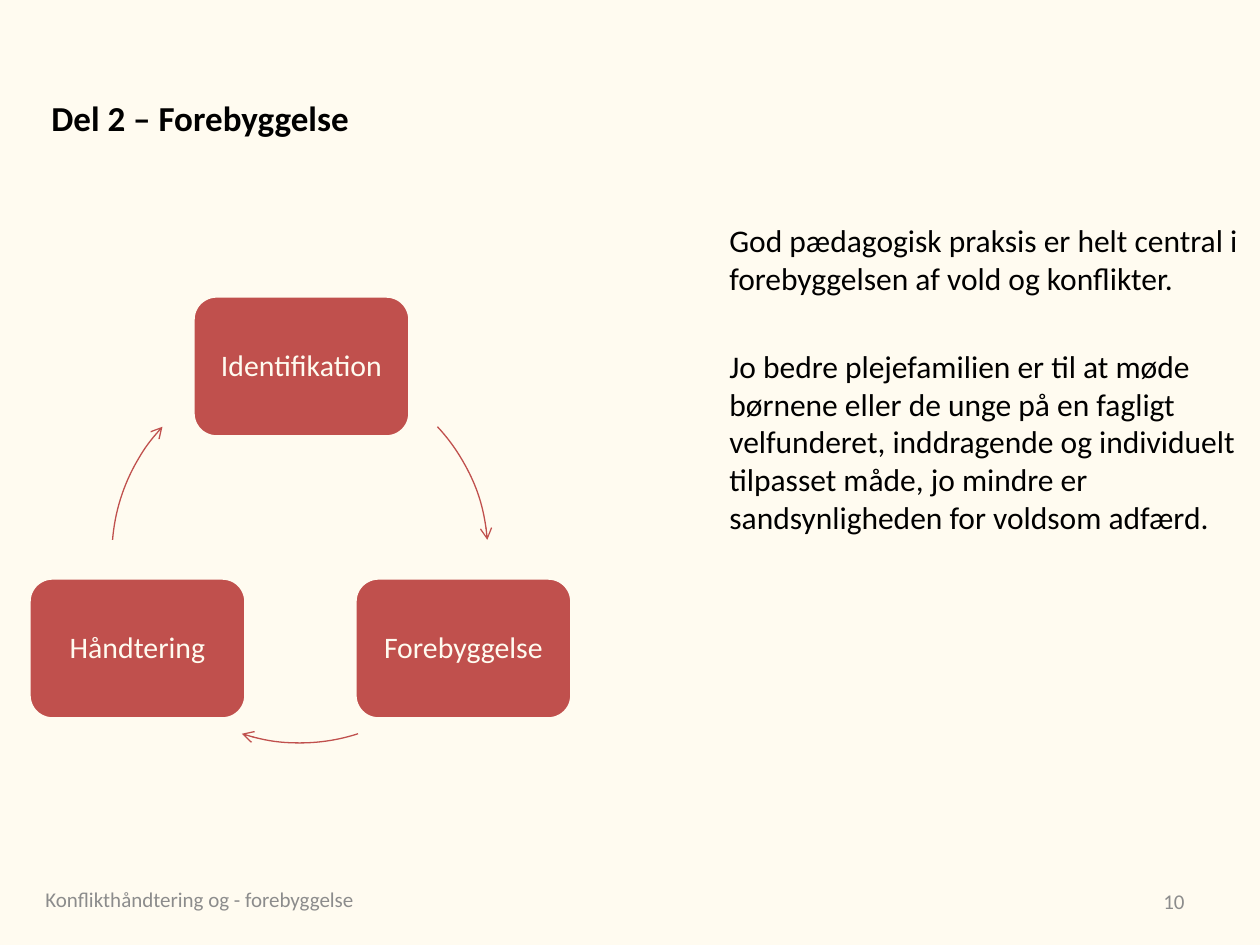
from typing import NamedTuple

from lxml import etree
from pptx import Presentation
from pptx import util as u
from pptx.dml.color import RGBColor
from pptx.enum import shapes, text
from pptx.oxml.ns import qn

EMU_PER_PX = 914400 / 126
FONT = "Calibri"
CREAM, RED, BLACK, GREY = "FFFBF0", "C0504D", "000000", "8C8C8C"


class Box(NamedTuple):
    left: int
    top: int
    width: int
    height: int


class Step(NamedTuple):
    label: str
    left: int
    top: int


class Arc(NamedTuple):
    start: float  # degrees, clockwise from three o'clock
    end: float


CYCLE = Box(112, 367, 376, 376)
STEP_WIDTH, STEP_HEIGHT = 217, 141
STEPS = [
    Step("Identifikation", 193, 296),
    Step("Forebyggelse", 355, 578),
    Step("Håndtering", 29, 578),
]
ARCS = [Arc(317, 355.4), Arc(72, 108), Arc(184.6, 223)]


def px(value: int) -> u.Emu:
    return u.Emu(round(value * EMU_PER_PX))


def place(box: Box) -> list[u.Emu]:
    return [px(value) for value in box]


def color(code: str) -> RGBColor:
    return RGBColor.from_string(code)


def write(shape, *paragraphs: str, size: float, fill: str = BLACK,
          bold: bool = False, align=text.PP_ALIGN.LEFT,
          anchor=text.MSO_ANCHOR.MIDDLE, gap: float = 0,
          spacing: float = 1.0) -> None:
    frame = shape.text_frame
    frame.word_wrap = True
    frame.vertical_anchor = anchor
    for index, content in enumerate(paragraphs):
        paragraph = frame.add_paragraph() if index else frame.paragraphs[0]
        paragraph.alignment = align
        paragraph.line_spacing = spacing
        paragraph.space_before = u.Pt(gap if index else 0)
        run = paragraph.add_run()
        run.text = content
        run.font.name = FONT
        run.font.size = u.Pt(size)
        run.font.bold = bold
        run.font.color.rgb = color(fill)


def add_text(slide, box: Box, *paragraphs: str, **style) -> None:
    write(slide.shapes.add_textbox(*place(box)), *paragraphs, **style)


def add_step(slide, step: Step) -> None:
    box = Box(step.left, step.top, STEP_WIDTH, STEP_HEIGHT)
    shape = slide.shapes.add_shape(
        shapes.MSO_SHAPE.ROUNDED_RECTANGLE, *place(box))
    shape.shadow.inherit = False
    shape.fill.solid()
    shape.fill.fore_color.rgb = color(RED)
    shape.line.color.rgb = color(CREAM)
    shape.line.width = u.Pt(2)
    write(shape, step.label, size=17, fill=CREAM,
          align=text.PP_ALIGN.CENTER, spacing=0.9)


def add_arc(slide, arc: Arc) -> None:
    shape = slide.shapes.add_shape(shapes.MSO_SHAPE.ARC, *place(CYCLE))
    shape.shadow.inherit = False
    shape.fill.background()
    # Angles are stored in 1/60000 degree, adjustments in 1/100000
    shape.adjustments[0] = arc.start * 0.6
    shape.adjustments[1] = arc.end * 0.6
    shape.line.color.rgb = color(RED)
    shape.line.width = u.Pt(0.75)
    line = shape.line._get_or_add_ln()
    etree.SubElement(line, qn("a:tailEnd"), type="arrow")


def main() -> None:
    presentation = Presentation()
    presentation.slide_width = u.Inches(10)
    presentation.slide_height = u.Inches(7.5)
    slide = presentation.slides.add_slide(presentation.slide_layouts[6])
    slide.background.fill.solid()
    slide.background.fill.fore_color.rgb = color(CREAM)

    # Title
    add_text(slide, Box(39, 38, 1095, 158), "Del 2 – Forebyggelse",
             size=20, bold=True)

    # Cycle of steps
    for step, arc in zip(STEPS, ARCS):
        add_step(slide, step)
        add_arc(slide, arc)

    # Body text
    add_text(
        slide, Box(717, 215, 543, 634),
        "God pædagogisk praksis er helt central i forebyggelsen af vold og "
        "konflikter.",
        "Jo bedre plejefamilien er til at møde børnene eller de unge på en "
        "fagligt velfunderet, inddragende og individuelt tilpasset måde, jo "
        "mindre er sandsynligheden for voldsom adfærd.",
        size=18, anchor=text.MSO_ANCHOR.TOP, gap=28.6)

    # Footer and page number
    add_text(slide, Box(33, 874, 399, 50),
             "Konflikthåndtering og - forebyggelse", size=12, fill=GREY)
    add_text(slide, Box(903, 876, 294, 50), "10", size=12, fill=GREY,
             align=text.PP_ALIGN.RIGHT)

    presentation.save("out.pptx")


if __name__ == "__main__":
    main()
